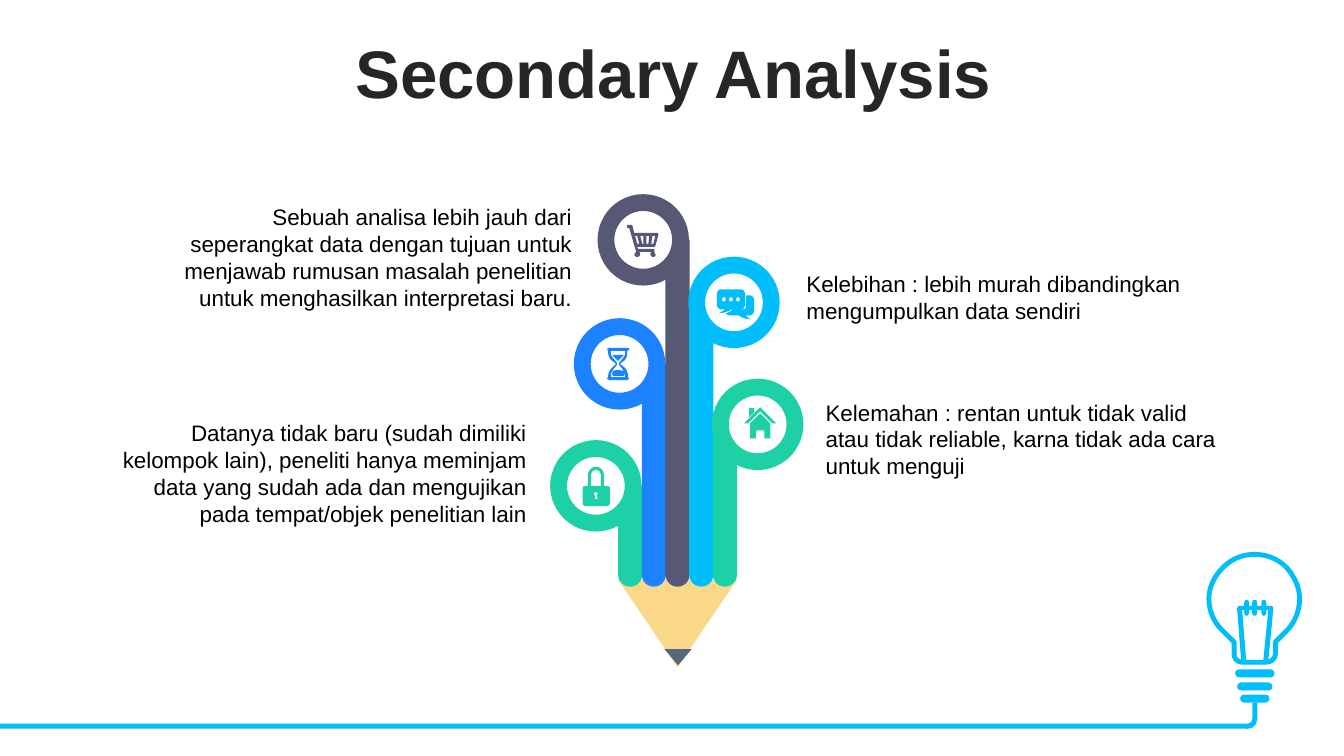
"""Build the Secondary Analysis slide: a pencil of five stems with icons and notes."""
from lxml.etree import SubElement
from pptx import Presentation
from pptx.dml.color import RGBColor
from pptx.enum.shapes import MSO_SHAPE as Kind
from pptx.enum.text import MSO_ANCHOR as Anchor, MSO_AUTO_SIZE as Fit, PP_ALIGN as Align
from pptx.oxml.ns import qn
from pptx.util import Inches, Pt

SKY, BLUE, MINT, SLATE = "00BDFB", "1C82FF", "1ED0A6", "565874"
WHITE = "FFFFFF"

prs = Presentation()
prs.slide_width, prs.slide_height = Inches(13.33), Inches(7.5)
cell = prs.slide_height // 750
slide = prs.slides.add_slide(prs.slide_layouts[5])
shapes = slide.shapes


def paint(shape, fill, line=None, width=0):
    """Fill and outline a shape without a shadow."""
    shape.shadow.inherit = False
    shape.fill.solid()
    shape.fill.fore_color.rgb = RGBColor.from_string(fill)
    if line:
        shape.line.color.rgb = RGBColor.from_string(line)
        shape.line.width = Pt(width)
    else:
        shape.line.fill.background()
    return shape


def draw(left, top, loops):
    """Trace closed loops of points (x, y) and curves (x1, y1, x2, y2, x, y)."""
    pen = None
    for loop in loops:
        spots = [((left + step[-2]) * cell, (top + step[-1]) * cell) for step in loop]
        if pen is None:
            pen = shapes.build_freeform(*spots[0])
        else:
            pen.move_to(*spots[0])
        pen.add_line_segments(spots[1:], close=True)
    shape = pen.convert_to_shape()
    steps = [step for loop in loops for step in loop[1:]]
    for node, step in zip(list(shape._element.iter(qn("a:lnTo"))), steps):
        if len(step) == 6:
            bend = SubElement(node.getparent(), qn("a:cubicBezTo"))
            for x, y in zip(step[::2], step[1::2]):
                dot = SubElement(bend, qn("a:pt"))
                dot.set("x", str((left + x) * cell - shape.left))
                dot.set("y", str((top + y) * cell - shape.top))
            node.getparent().replace(node, bend)
    return shape


title = shapes.title
title.left, title.top, title.width, title.height = [n * cell for n in (35, 37, 1266, 79)]
frame = title.text_frame
frame.text = "Secondary Analysis"
frame.auto_size, frame.vertical_anchor = Fit.NONE, Anchor.MIDDLE
head = frame.paragraphs[0]
head.alignment, head.line_spacing = Align.CENTER, 0.9
font = head.runs[0].font
font.name, font.size, font.bold = "Arial", Pt(48), True
font.color.rgb = RGBColor.from_string("262626")

bulb = [(44, 0), (56, 0, 67, 4, 76, 13), (84, 22, 89, 33, 89, 44), (89, 56, 84, 68, 76, 76),
        (65, 87), (65, 99), (65, 103, 61, 107, 56, 107), (32, 107),
        (27, 107, 24, 103, 24, 99), (24, 87), (13, 76), (4, 68, -1, 56, -1, 44),
        (-1, 33, 4, 22, 13, 13), (22, 4, 33, 0, 44, 0)]
paint(draw(1200, 550, [bulb]), WHITE, SKY, 3.5)

prongs = (7, 15, 24)
crest = [step for p in prongs
         for step in ((p, 6), (p, 3), (p, 1, p + 1, 0, p + 2, 0),
                      (p + 4, 0, p + 5, 1, p + 5, 3), (p + 5, 6))]
base = [step for p in reversed(prongs)
        for step in ((p + 5, 10), (p + 5, 13), (p + 5, 17, p, 17, p, 13), (p, 10))]
wire = [(0, 9), (0, 7, 1, 6, 2, 6), *crest, (33, 6), (35, 6, 36, 7, 36, 9),
        (31, 60), (31, 63, 26, 63, 26, 60), (31, 10), *base, (5, 10),
        (9, 60), (9, 63, 4, 63, 4, 60)]
paint(draw(1227, 595, [wire]), SKY)

parts = [
    (Kind.ROUNDED_RECTANGLE, (1225, 664, 39, 8), 0, SKY, [0.5]),
    (Kind.ROUNDED_RECTANGLE, (1227, 677, 35, 8), 0, SKY, [0.5]),
    (Kind.ROUNDED_RECTANGLE, (1230, 689, 29, 8), 0, SKY, [0.5]),
    (Kind.RECTANGLE, (0, 718, 1237, 5), 0, SKY, []),
    (Kind.RECTANGLE, (1242, 697, 5, 17), 0, SKY, []),
    (Kind.BLOCK_ARC, (1228, 704, 19, 19), 0, SKY, [213.39, 60.92, 0.27]),
    (Kind.TRAPEZOID, (613, 575, 118, 87), 180, "F5B317", [0.79]),
    (Kind.ISOSCELES_TRIANGLE, (659, 644, 27, 16), 180, "57687C", []),
]
stems = [(MINT, 482), (BLUE, 361), (SLATE, 238), (SKY, 300), (MINT, 421)]
pitch, ring, foot = 23.5, 74, 582
for i, (hue, mid) in enumerate(stems):
    parts.append((Kind.ROUND_2_SAME_RECTANGLE, (613 + pitch * i, mid, 24, foot - mid),
                  180, hue, [0.5, 0]))
    side = 554 if i < 3 else 620.5
    parts.append((Kind.OVAL, (side + pitch * i, mid - ring / 2, ring, ring), 0, hue, []))

for kind, spot, turn, hue, knobs in parts:
    part = shapes.add_shape(kind, *[int(n * cell) for n in spot])
    part.rotation = turn
    for k, knob in enumerate(knobs):
        part.adjustments[k] = knob
    if kind == Kind.OVAL:
        paint(part, WHITE, hue, 12)
    else:
        paint(part, hue)
    if kind == Kind.TRAPEZOID:
        tint = part.fill._xPr.find(qn("a:solidFill"))[0]
        SubElement(tint, qn("a:alpha")).set("val", "50000")

notes = [
    (790, 263, 64, Align.LEFT,
     "Kelebihan : lebih murah dibandingkan mengumpulkan data sendiri"),
    (156, 196, 118, Align.RIGHT,
     "Sebuah analisa lebih jauh dari seperangkat data dengan tujuan untuk menjawab "
     "rumusan masalah penelitian untuk menghasilkan interpretasi baru."),
    (111, 397, 145, Align.RIGHT,
     "Datanya tidak baru (sudah dimiliki kelompok lain), peneliti hanya meminjam data "
     "yang sudah ada dan mengujikan pada tempat/objek penelitian lain"),
    (809, 390, 91, Align.LEFT,
     "Kelemahan : rentan untuk tidak valid atau tidak reliable, karna tidak ada cara "
     "untuk menguji"),
]
for left, top, tall, side, words in notes:
    box = shapes.add_textbox(left * cell, top * cell, 421 * cell, tall * cell)
    frame = box.text_frame
    frame.word_wrap, frame.auto_size = True, Fit.SHAPE_TO_FIT_TEXT
    frame.vertical_anchor = Anchor.MIDDLE
    frame.text = words
    frame.paragraphs[0].alignment = side
    font = frame.paragraphs[0].runs[0].font
    font.name, font.size = "Arial", Pt(16)
    font.color.rgb = RGBColor.from_string("000000")

chat = [[(x - 2, 10), (x - 2, 7, x + 2, 7, x + 2, 10), (x + 2, 13, x - 2, 13, x - 2, 10)]
        for x in (7, 14, 21)] + [
    [(29, 6), (33, 6), (35, 6, 37, 8, 37, 10), (37, 22), (37, 24, 35, 26, 33, 26),
     (29, 26), (30, 27, 30, 28, 34, 30), (27, 29, 26, 29, 22, 26), (13, 26),
     (11, 26, 10, 25, 9, 24), (12, 23, 14, 22, 16, 20), (25, 20),
     (28, 20, 29, 19, 29, 17)],
    [(4, 0), (24, 0), (26, 0, 28, 2, 28, 4), (28, 16), (28, 18, 26, 20, 24, 20),
     (15, 20), (11, 22, 9, 23, 2, 24), (6, 21, 6, 22, 8, 20), (4, 20),
     (2, 20, 0, 18, 0, 16), (0, 4), (0, 2, 2, 0, 4, 0)]]
glass = [
    [(12, 22), (13, 22, 15, 23, 17, 23), (18, 25, 18, 27, 17, 28), (6, 28),
     (5, 27, 5, 25, 6, 23), (8, 22, 10, 22, 12, 22)],
    [(5, 7), (17, 7), (15, 9), (11, 13), (7, 9)],
    [(4, 3), (3, 6, 4, 9, 6, 10), (10, 15), (10, 17), (6, 22), (4, 24, 4, 26, 4, 29),
     (18, 29), (19, 26, 18, 24, 16, 22), (12, 17), (12, 15), (16, 10),
     (18, 8, 19, 6, 18, 3)],
    [(2, 0), (20, 0), (23, 0, 23, 3, 20, 3), (21, 6, 20, 9, 18, 12), (13, 16), (18, 20),
     (20, 22, 21, 26, 21, 29), (23, 30, 22, 32, 20, 32), (2, 32), (0, 32, -1, 30, 1, 29),
     (1, 26, 2, 23, 4, 21), (9, 16), (4, 12), (2, 10, 1, 6, 1, 3), (-1, 2, 0, 0, 2, 0)]]
cart = [
    [(25, 11), (24, 19), (26, 19), (28, 11)], [(19, 11), (19, 19), (21, 19), (22, 11)],
    [(13, 11), (15, 19), (16, 19), (16, 11)], [(8, 11), (10, 19), (12, 19), (10, 11)],
    [(5, 0), (7, 8), (30, 8), (31, 9), (31, 10), (28, 21), (27, 22), (10, 22), (11, 24),
     (27, 24), (27, 27), (29, 28, 29, 32, 26, 32), (23, 32, 22, 28, 24, 27), (12, 27),
     (14, 28, 13, 32, 10, 32), (7, 32, 6, 28, 9, 27), (2, 3), (0, 3), (0, 0)]]
house = [
    [(16, 6), (26, 16), (26, 31), (20, 31), (20, 24), (20, 23, 19, 23, 18, 23), (14, 23),
     (13, 23, 12, 23, 12, 24), (12, 31), (6, 31), (6, 16)],
    [(5, 1), (10, 1), (10, 5), (5, 10)],
    [(16, 0), (32, 16), (28, 16), (16, 4), (4, 16), (0, 16)]]
lock = [
    [(12, 29), (10, 27, 11, 25, 13, 25), (15, 25, 16, 27, 14, 29), (15, 32), (12, 32)],
    [(13, 3), (10, 3, 8, 6, 8, 8), (8, 19), (18, 19), (18, 8), (18, 5, 16, 3, 13, 3)],
    [(13, 0), (18, 0, 21, 4, 21, 8), (21, 19), (24, 19), (26, 19, 27, 20, 27, 21),
     (27, 36), (27, 38, 26, 39, 24, 39), (2, 39), (1, 39, 0, 38, 0, 36), (0, 21),
     (0, 20, 1, 19, 2, 19), (5, 19), (5, 8), (5, 4, 9, 0, 13, 0)]]
for left, top, loops, hue in [(711, 287, chat, SKY), (602, 345, glass, BLUE),
                              (622, 223, cart, SLATE), (738, 404, house, MINT),
                              (578, 463, lock, MINT)]:
    paint(draw(left, top, loops), hue)

prs.save("out.pptx")
